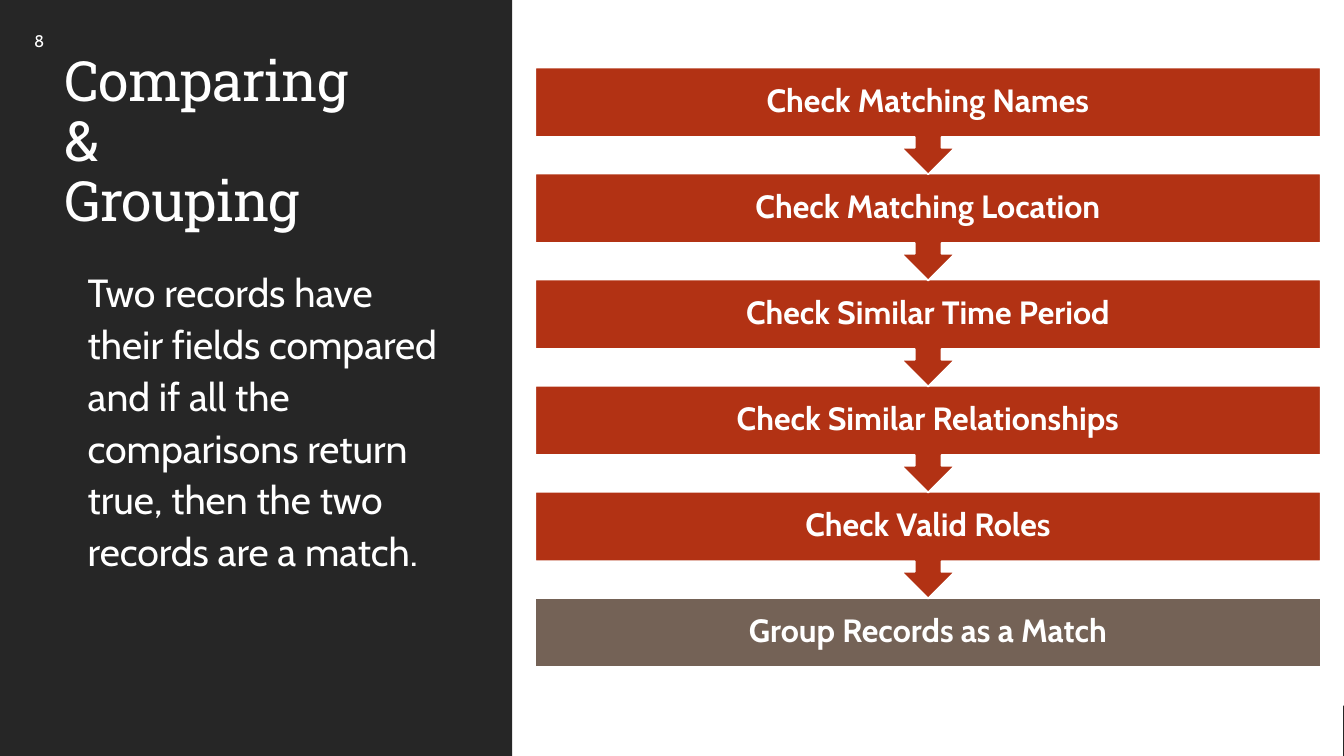
from dataclasses import dataclass, field

from pptx import Presentation
from pptx.dml.color import RGBColor
from pptx.enum.shapes import MSO_SHAPE
from pptx.enum.text import MSO_ANCHOR, PP_ALIGN
from pptx.util import Inches, Pt

RECTANGLE = MSO_SHAPE.RECTANGLE
CALLOUT = MSO_SHAPE.UP_ARROW_CALLOUT
TOP, MIDDLE = MSO_ANCHOR.TOP, MSO_ANCHOR.MIDDLE
LEFT, CENTER = PP_ALIGN.LEFT, PP_ALIGN.CENTER

WHITE, DARK, RED, BROWN = "FFFFFF", "262626", "B23214", "746256"


@dataclass
class Area:
    left: float
    top: float
    width: float
    height: float

    def lengths(self):
        return [Inches(n) for n in (self.left, self.top, self.width, self.height)]


@dataclass
class Label:
    text: str
    area: Area
    size: float
    font: str = "Cabin"
    bold: bool = False
    anchor: int = TOP
    wrap: bool = True
    margins: tuple = (0.1, 0.05, 0.1, 0.05)
    spacing: dict = field(default_factory=dict)
    tracking: int = 0


def color(value: str) -> RGBColor:
    return RGBColor.from_string(value)


def set_all(target, values: dict) -> None:
    for name, value in values.items():
        setattr(target, name, value)


def add_block(page, kind, area: Area, fill: str, outlined: bool = False):
    block = page.shapes.add_shape(kind, *area.lengths())
    block.shadow.inherit = False
    block.fill.solid()
    block.fill.fore_color.rgb = color(fill)
    if outlined:
        block.line.color.rgb = color(WHITE)
        block.line.width = Pt(1.25)
    else:
        block.line.fill.background()
    return block


def add_label(page, label: Label) -> None:
    box = page.shapes.add_textbox(*label.area.lengths())
    frame = box.text_frame
    sides = ("margin_left", "margin_top", "margin_right", "margin_bottom")
    set_all(frame, {"word_wrap": label.wrap, "vertical_anchor": label.anchor})
    set_all(frame, {side: Inches(n) for side, n in zip(sides, label.margins)})
    para = frame.paragraphs[0]
    para.text = label.text
    set_all(para, {"alignment": LEFT} | label.spacing)
    for span in para.runs:
        set_all(span.font, {"name": label.font, "size": Pt(label.size), "bold": label.bold})
        span.font.color.rgb = color(WHITE)
        if label.tracking:
            span.font._element.set("spc", str(label.tracking))


# Steps of the flow, from top to bottom
STEPS = [
    "Check Matching Names",
    "Check Matching Location",
    "Check Similar Time Period",
    "Check Similar Relationships",
    "Check Valid Roles",
    "Group Records as a Match",
]
FLOW = Area(5.31, 0.67, 7.79, 0.69)
STEP_PITCH = 1.052
CALLOUT_HEIGHT = 1.06


def add_flow(page) -> None:
    # Later steps lie behind earlier ones, so draw upwards
    for index in reversed(range(len(STEPS))):
        top = FLOW.top + index * STEP_PITCH
        bar = Area(FLOW.left, top, FLOW.width, FLOW.height)
        if index == len(STEPS) - 1:
            add_block(page, RECTANGLE, bar, BROWN, outlined=True)
        else:
            area = Area(FLOW.left, top, FLOW.width, CALLOUT_HEIGHT)
            callout = add_block(page, CALLOUT, area, RED, outlined=True)
            callout.rotation = 180
        add_label(page, Label(STEPS[index], bar, 23, bold=True, anchor=MIDDLE,
                              margins=(0.18,) * 4,
                              spacing={"alignment": CENTER, "line_spacing": 0.9}))


def main() -> None:
    deck = Presentation()
    set_all(deck, {"slide_width": Inches(13.33), "slide_height": Inches(7.5)})
    page = deck.slides.add_slide(deck.slide_layouts[6])

    # Background: bottom bar, white sheet, dark side panel
    add_block(page, RECTANGLE, Area(0, 7, 13.33, 0.5), DARK)
    add_block(page, RECTANGLE, Area(0, 0, 13.32, 7.5), WHITE)
    add_block(page, RECTANGLE, Area(0, 0, 5.08, 7.5), DARK)

    # Side panel text
    add_label(page, Label("Comparing \v& \vGrouping", Area(0.54, 0.48, 3.98, 1.89), 39.6,
                          font="Roboto Slab", anchor=MIDDLE, tracking=-50,
                          spacing={"line_spacing": 0.9}))
    add_label(page, Label("Two records have their fields compared and if all the "
                          "comparisons return true, then the two records are a match.",
                          Area(0.67, 2.57, 3.85, 4.35), 28, margins=(0.2, 0.05, 0.1, 0.05),
                          spacing={"line_spacing": 1.1, "space_before": Pt(12),
                                   "space_after": Pt(2)}))

    add_flow(page)

    # Page number
    add_label(page, Label("8", Area(0.24, 0.26, 0.3, 0.3), 12, wrap=False))
    deck.save("out.pptx")


if __name__ == "__main__":
    main()
